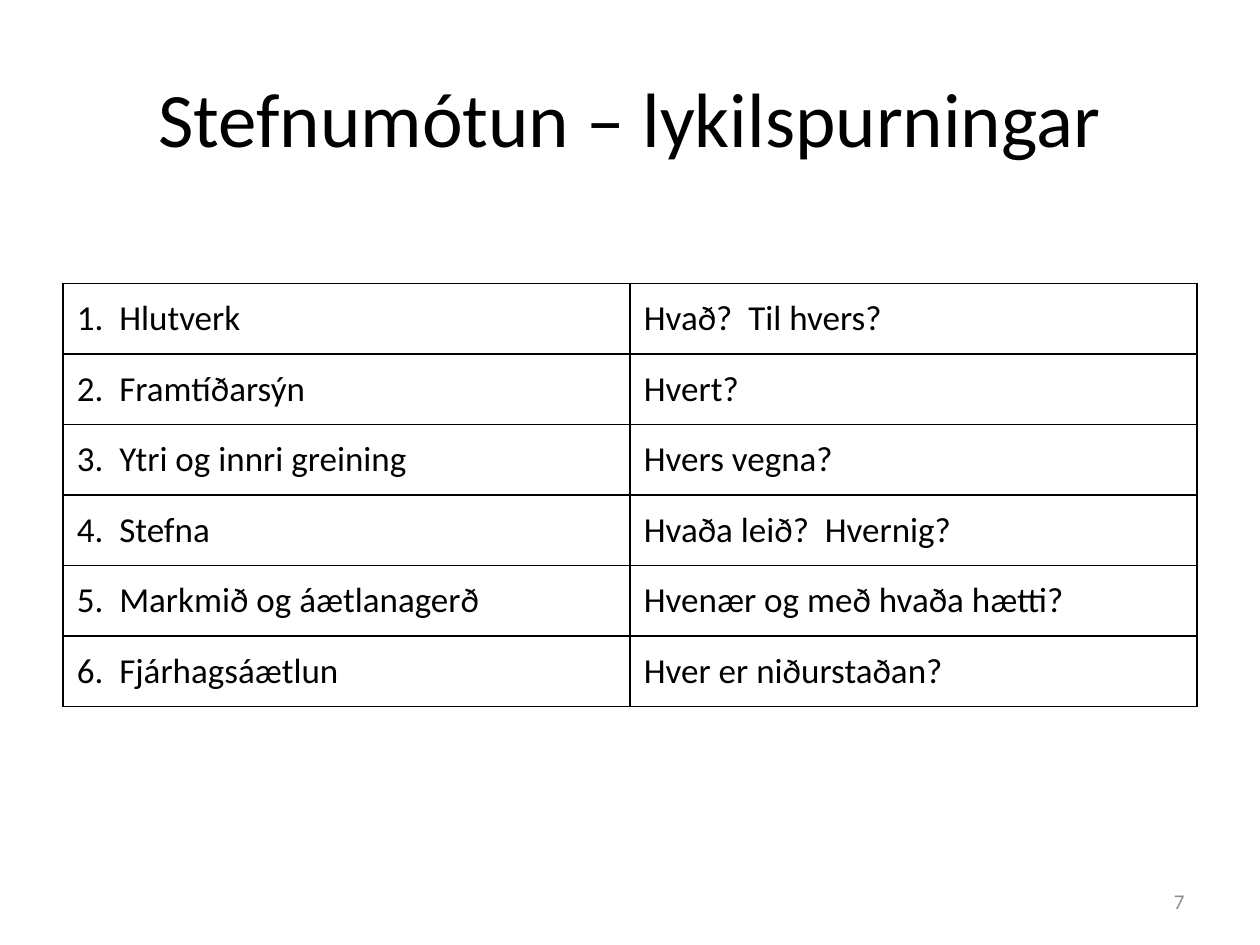
from lxml.etree import SubElement
from pptx import Presentation
from pptx.dml.color import RGBColor
from pptx.enum.text import MSO_ANCHOR as Anchor, PP_ALIGN as Align
from pptx.oxml.ns import qn
from pptx.util import Cm, Pt

BLACK = RGBColor(0x00, 0x00, 0x00)
GRAY = RGBColor(0x8C, 0x8C, 0x8C)

QUESTIONS = [
    ("1.  Hlutverk", "Hvað?  Til hvers?"),
    ("2.  Framtíðarsýn", "Hvert?"),
    ("3.  Ytri og innri greining", "Hvers vegna?"),
    ("4.  Stefna", "Hvaða leið?  Hvernig?"),
    ("5.  Markmið og áætlanagerð", "Hvenær og með hvaða hætti?"),
    ("6.  Fjárhagsáætlun", "Hver er niðurstaðan?"),
]


class PageBuilder:
    font_name = "Calibri"
    border_width = Pt(1)

    def __init__(self, page):
        self.page = page

    def style(self, para, size, color, align):
        para.alignment = align
        para.font.name = self.font_name
        para.font.size = Pt(size)
        para.font.color.rgb = color

    def text(self, words, left, top, width, height, size, color, align):
        box = self.page.shapes.add_textbox(Cm(left), Cm(top), Cm(width), Cm(height))
        frame = box.text_frame
        frame.word_wrap = True
        frame.vertical_anchor = Anchor.MIDDLE
        frame.text = words
        self.style(frame.paragraphs[0], size, color, align)

    def border(self, cell):
        properties = cell._tc.get_or_add_tcPr()
        for position, side in enumerate(("a:lnL", "a:lnR", "a:lnT", "a:lnB")):
            line = SubElement(properties, qn(side), w=str(self.border_width))
            fill = SubElement(line, qn("a:solidFill"))
            SubElement(fill, qn("a:srgbClr"), val=str(BLACK))
            properties.insert(position, line)  # borders come before the fill

    def table(self, rows, left, top, width, row_height, size):
        table = self.page.shapes.add_table(
            len(rows), len(rows[0]), Cm(left), Cm(top),
            Cm(width), Cm(row_height * len(rows))).table
        table.first_row = table.horz_banding = False
        for row, entries in zip(table.rows, rows):
            for cell, words in zip(row.cells, entries):
                cell.text = words
                cell.vertical_anchor = Anchor.MIDDLE
                cell.margin_left = cell.margin_right = Cm(0.28)
                cell.fill.background()
                self.border(cell)
                self.style(cell.text_frame.paragraphs[0], size, BLACK, Align.LEFT)


def main():
    deck = Presentation()
    deck.slide_width, deck.slide_height = Cm(25.4), Cm(19.05)
    builder = PageBuilder(deck.slides.add_slide(deck.slide_layouts[6]))

    # Title
    builder.text("Stefnumótun – lykilspurningar", 1.27, 0.76, 22.86, 3.18,
                 44, BLACK, Align.CENTER)

    # Key questions
    builder.table(QUESTIONS, 1.27, 5.72, 22.86, 1.42, 20)

    # Page number
    builder.text("7", 18.2, 17.66, 5.93, 1.01, 12, GRAY, Align.RIGHT)

    deck.save("out.pptx")


if __name__ == "__main__":
    main()
